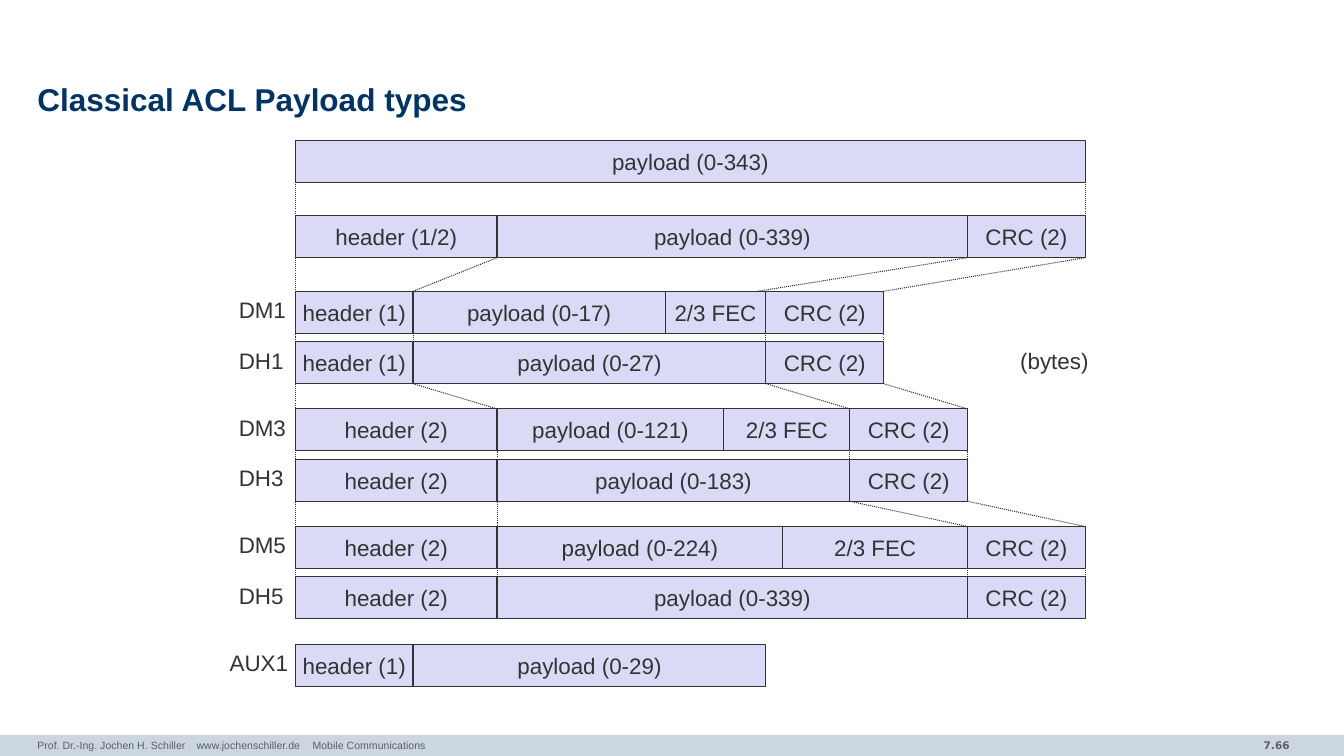
"""Build the slide on the payload types of classical ACL packets."""
import pptx
import pptx.dml.color
import pptx.enum.dml
import pptx.enum.shapes
import pptx.enum.text
import pptx.oxml.ns
import pptx.oxml.xmlchemy
import pptx.util

Inches = pptx.util.Inches
RGB = pptx.dml.color.RGBColor
ALIGN = pptx.enum.text.PP_ALIGN
ANCHOR = pptx.enum.text.MSO_ANCHOR
RECT = pptx.enum.shapes.MSO_SHAPE.RECTANGLE
Element = pptx.oxml.xmlchemy.OxmlElement

NAVY = RGB(0x00, 0x33, 0x66)
INK = RGB(0x33, 0x33, 0x33)
GRAY = RGB(0x5F, 0x5F, 0x5F)
LILAC = RGB(0xDA, 0xDA, 0xF6)
MIST = RGB(0xCC, 0xD6, 0xE0)

UNIT = 1 / 12
TALL = 5
ROWS = [
    (0, None, [("payload (0-343)", 94)]),
    (9, None, [("header (1/2)", 24), ("payload (0-339)", 56), ("CRC (2)", 14)]),
    (18, ("DM1", 2.27, 0.67), [("header (1)", 14), ("payload (0-17)", 30),
                               ("2/3 FEC", 12), ("CRC (2)", 14)]),
    (24, ("DH1", 2.27, 0.64), [("header (1)", 14), ("payload (0-27)", 42),
                               ("CRC (2)", 14)]),
    (32, ("DM3", 2.27, 0.67), [("header (2)", 24), ("payload (0-121)", 27),
                               ("2/3 FEC", 15), ("CRC (2)", 14)]),
    (38, ("DH3", 2.27, 0.64), [("header (2)", 24), ("payload (0-183)", 42),
                               ("CRC (2)", 14)]),
    (46, ("DM5", 2.27, 0.67), [("header (2)", 24), ("payload (0-224)", 34),
                               ("2/3 FEC", 22), ("CRC (2)", 14)]),
    (52, ("DH5", 2.27, 0.64), [("header (2)", 24), ("payload (0-339)", 56),
                               ("CRC (2)", 14)]),
    (60, ("AUX1", 2.18, 0.78), [("header (1)", 14), ("payload (0-29)", 42)]),
]
DOTS = [
    (0, 9, 0, 5), (94, 9, 94, 5), (0, 52, 0, 14),
    (14, 18, 24, 14), (55, 18, 80, 14), (70, 18, 94, 14),
    (14, 25, 14, 21), (56, 25, 56, 21), (70, 24, 70, 23),
    (24, 32, 14, 29), (56, 29, 66, 32), (70, 29, 80, 32),
    (24, 54, 24, 37), (66, 39, 66, 35), (80, 38, 80, 37),
    (66, 43, 80, 46), (80, 43, 94, 46),
    (80, 53, 80, 49), (94, 52, 94, 51),
]


def write(shape, text, size=16, color=INK, bold=False, font="Arial", align=ALIGN.LEFT,
          anchor=ANCHOR.TOP, wrap=False, side=0.1, edge=0.05, space=None, tabs=()):
    """Put one formatted paragraph into a shape."""
    frame = shape.text_frame
    frame.word_wrap = wrap
    frame.vertical_anchor = anchor
    frame.margin_left = frame.margin_right = Inches(side)
    frame.margin_top = frame.margin_bottom = Inches(edge)
    para = frame.paragraphs[0]
    para.alignment = align
    if space:
        para.line_spacing = space
    if tabs:
        stops = Element("a:tabLst")
        for place in tabs:
            stop = Element("a:tab")
            stop.set("pos", str(Inches(place)))
            stop.set("algn", "l")
            stops.append(stop)
        para._p.get_or_add_pPr().append(stops)
    run = para.add_run()
    run.text = text
    run.font.name = font
    run.font.size = pptx.util.Pt(size)
    run.font.bold = bold
    run.font.color.rgb = color


def note(slide, box, text, **form):
    """Add a text box with formatted text."""
    write(slide.shapes.add_textbox(*map(Inches, box)), text, **form)


def block(slide, box, fill, line=None):
    """Add a flat rectangle and return it."""
    shape = slide.shapes.add_shape(RECT, *map(Inches, box))
    shape.shadow.inherit = False
    shape.fill.solid()
    shape.fill.fore_color.rgb = fill
    if line is None:
        shape.line.fill.background()
    else:
        shape.line.color.rgb = line
        shape.line.width = pptx.util.Pt(0.75)
    return shape


def dotted(slide, ends):
    """Add a dotted line between two points."""
    kind = pptx.enum.shapes.MSO_CONNECTOR.STRAIGHT
    link = slide.shapes.add_connector(kind, *map(Inches, ends))
    link.line.color.rgb = INK
    link.line.width = pptx.util.Pt(0.75)
    link.line.dash_style = pptx.enum.dml.MSO_LINE.ROUND_DOT
    props = link._element.find(pptx.oxml.ns.qn("p:spPr"))
    props.append(Element("a:effectLst"))


def footer(slide, left, top, width, height):
    """Draw the footer band with its credits and page number."""
    block(slide, (left, top, width, height), MIST)
    note(slide, (left + 0.37, top - 0.01, 8.72, 0.22),
         "Prof. Dr.-Ing. Jochen H. Schiller\twww.jochenschiller.de\tMobile Communications",
         size=7.5, color=GRAY, wrap=True, side=0, tabs=(1.58, 2.73))
    note(slide, (left + 11.1, top - 0.01, 1.79, 0.23), "7.66", size=7.5, color=GRAY,
         bold=True, font="DejaVu Sans", align=ALIGN.RIGHT, wrap=True)


def packets(slide, left, top):
    """Draw the packet rows, their labels and the dotted links."""
    for down, label, cells in ROWS:
        high = top + down * UNIT
        across = 0
        for text, wide in cells:
            box = (left + across * UNIT, high, wide * UNIT, TALL * UNIT)
            write(block(slide, box, LILAC, INK), text, align=ALIGN.CENTER,
                  anchor=ANCHOR.MIDDLE)
            across += wide
        if label:
            name, start, span = label
            note(slide, (start, high, span, 0.37), name)
    for x1, y1, x2, y2 in DOTS:
        dotted(slide, (left + x1 * UNIT, top + y1 * UNIT,
                       left + x2 * UNIT, top + y2 * UNIT))
    note(slide, (left + 7.09, top + 2, 0.88, 0.37), "(bytes)")


def main():
    """Build and save the slide."""
    deck = pptx.Presentation()
    deck.slide_width = Inches(13.33)
    deck.slide_height = Inches(7.5)
    slide = deck.slides.add_slide(deck.slide_layouts[6])
    footer(slide, 0, 7.29, 13.33, 0.21)
    note(slide, (0.37, 0.78, 12.6, 0.47), "Classical ACL Payload types", size=22.5,
         color=NAVY, bold=True, anchor=ANCHOR.MIDDLE, wrap=True, side=0, edge=0,
         space=0.85)
    packets(slide, 2.93, 1.39)
    deck.save("out.pptx")


if __name__ == "__main__":
    main()
